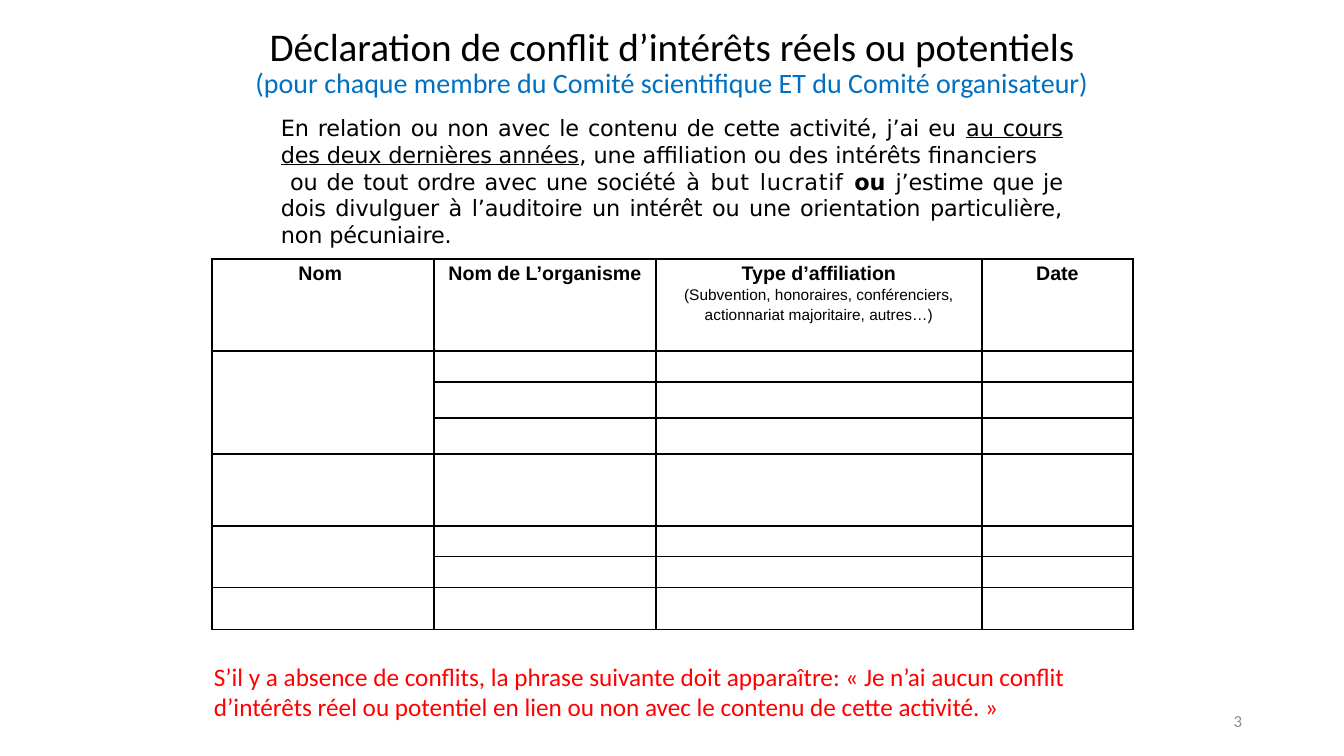
from lxml import etree
from pptx import Presentation
from pptx.dml.color import RGBColor
from pptx.enum.text import MSO_ANCHOR, PP_ALIGN
from pptx.oxml.ns import qn
from pptx.util import Emu, Pt

LEFT, CENTER, RIGHT, JUSTIFY = PP_ALIGN.LEFT, PP_ALIGN.CENTER, PP_ALIGN.RIGHT, PP_ALIGN.JUSTIFY
TOP, MIDDLE = MSO_ANCHOR.TOP, MSO_ANCHOR.MIDDLE
PX_PER_INCH = 100.8
COLORS = {"black": "000000", "blue": "0070C0", "grey": "8C8C8C", "red": "FF0000"}
BORDER_SIDES = ("a:lnL", "a:lnR", "a:lnT", "a:lnB")


def px(length):
    return Emu(round(length * 914400 / PX_PER_INCH))


class FormSlide:
    def __init__(self, slide):
        self.slide = slide

    def style(self, run, font="Calibri", size=16, color="black", bold=False,
              underline=False, spacing=0):
        """Format one run; spacing is in hundredths of a point."""
        run.font.name = font
        run.font.size = Pt(size)
        run.font.color.rgb = RGBColor.from_string(COLORS[color])
        run.font.bold = bold
        run.font.underline = underline
        if spacing:
            run.font._element.set("spc", str(spacing))

    def text(self, box, paragraphs, align=LEFT, anchor=TOP, line_spacing=None, indent=0):
        """Add a text box; each paragraph is a list of (text, style) pairs."""
        frame = self.slide.shapes.add_textbox(*map(px, box)).text_frame
        frame.word_wrap = True
        frame.vertical_anchor = anchor
        self.fill_frame(frame, paragraphs, align, line_spacing, indent)

    def fill_frame(self, frame, paragraphs, align, line_spacing=None, indent=0):
        for index, parts in enumerate(paragraphs):
            paragraph = frame.add_paragraph() if index else frame.paragraphs[0]
            paragraph.alignment = align
            paragraph.line_spacing = line_spacing
            if indent:
                for margin in ("marL", "marR"):
                    paragraph._p.get_or_add_pPr().set(margin, str(px(indent)))
            for content, look in parts:
                if content == "\n":
                    paragraph.add_line_break()
                    continue
                run = paragraph.add_run()
                run.text = content
                self.style(run, **look)

    def border(self, cell, width=1):
        properties = cell._tc.get_or_add_tcPr()
        for side in BORDER_SIDES:
            line = etree.SubElement(properties, qn(side), w=str(Pt(width)))
            solid = etree.SubElement(line, qn("a:solidFill"))
            etree.SubElement(solid, qn("a:srgbClr"), val=COLORS["black"])

    def table(self, left, top, widths, heights, headings, merges):
        """Add a bordered table; merges lists (first row, last row) in column 0."""
        box = (left, top, sum(widths), sum(heights))
        table = self.slide.shapes.add_table(len(heights), len(widths), *map(px, box)).table
        table.first_row = table.horz_banding = False
        for column, width in zip(table.columns, widths):
            column.width = px(width)
        for row, height in zip(table.rows, heights):
            row.height = px(height)
        for cell in table.iter_cells():
            cell.margin_left = cell.margin_right = px(3)
            cell.margin_top = cell.margin_bottom = 0
            self.border(cell)
            cell.fill.background()
        for column, paragraphs in enumerate(headings):
            self.fill_frame(table.cell(0, column).text_frame, paragraphs, CENTER, 1.15)
        for first, last in merges:
            table.cell(first, 0).merge(table.cell(last, 0))


def main():
    presentation = Presentation()
    presentation.slide_width, presentation.slide_height = px(1344), px(756)
    form = FormSlide(presentation.slides.add_slide(presentation.slide_layouts[6]))

    form.text((237, 0, 870, 127), [[
        ("Déclaration de conflit d’intérêts réels ou potentiels", {"size": 28}),
        ("\n", {}),
        ("(pour chaque membre du Comité scientifique ET du Comité organisateur)",
         {"size": 20, "color": "blue"}),
    ]], CENTER, MIDDLE, 0.9)

    form.text((950, 701, 302, 40), [[("3", {"size": 12, "color": "grey"})]], RIGHT, MIDDLE)

    heading = {"font": "Arial", "size": 14, "bold": True}
    detail = {"font": "Arial", "size": 11}
    form.table(
        212, 259, [222, 222, 326, 151], [92, 31, 36, 36, 72, 30, 31, 42],
        [
            [[("Nom ", heading)]],
            [[("Nom de L’organisme", heading)]],
            [[("Type d’affiliation", heading)],
             [("(Subvention, honoraires, conférenciers, actionnariat majoritaire, autres…)",
               detail)]],
            [[("Date", heading)]],
        ],
        [(1, 3), (5, 6)],
    )

    body = {"font": "DejaVu Sans"}
    tight = {**body, "spacing": -10}
    form.text((263, 109, 818, 146), [
        [("En relation ou non avec le contenu de cette activité, j’ai eu ", tight),
         ("au cours des deux dernières années", {**tight, "underline": True}),
         (", une affiliation ou des intérêts financiers", body)],
        [(" ou de tout ordre avec une société", tight),
         (" à but lucratif ", {**body, "spacing": 50}),
         ("ou ", {**body, "bold": True}),
         ("j’estime que je dois divulguer à l’auditoire un intérêt ou une orientation "
          "particulière, non pécuniaire.", tight)],
    ], JUSTIFY, indent=8)

    form.text((204, 656, 922, 72), [[
        ("S’il y a absence de conflits, la phrase suivante doit apparaître: « Je n’ai aucun "
         "conflit d’intérêts réel ou potentiel en lien ou non avec le contenu de cette "
         "activité. »", {"size": 18, "color": "red"}),
    ]])

    presentation.save("out.pptx")


if __name__ == "__main__":
    main()
